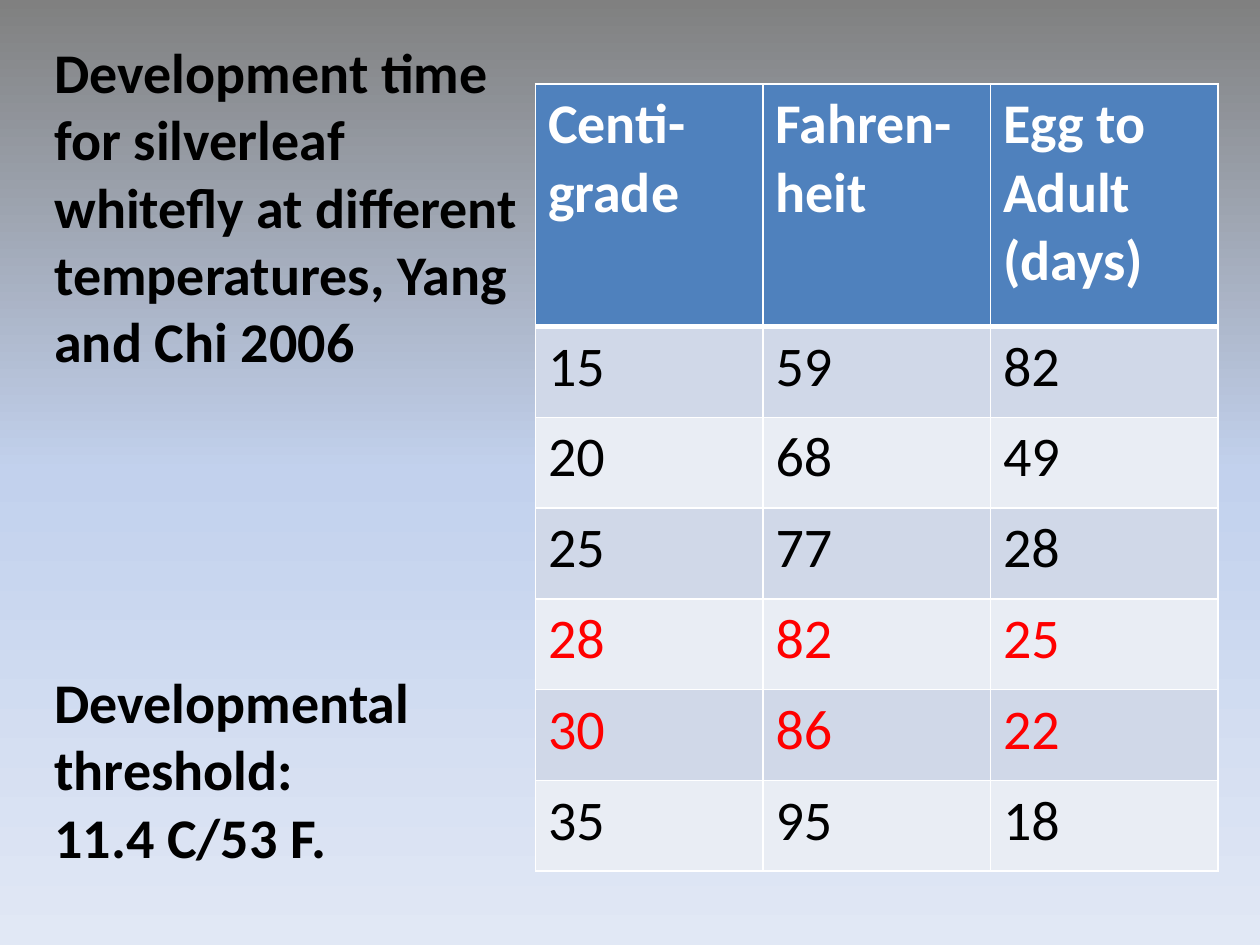
from copy import deepcopy

from lxml import etree
from pptx import Presentation
from pptx.dml.color import RGBColor
from pptx.enum.text import MSO_AUTO_SIZE
from pptx.oxml.ns import qn
from pptx.util import Pt

FIT_SHAPE = MSO_AUTO_SIZE.SHAPE_TO_FIT_TEXT
BLACK = RGBColor(0x00, 0x00, 0x00)
WHITE = RGBColor(0xFF, 0xFF, 0xFF)
RED = RGBColor(0xFF, 0x00, 0x00)
HEADER_BLUE = RGBColor(0x4F, 0x81, 0xBD)
BANDS = (RGBColor(0xD0, 0xD8, 0xE8), RGBColor(0xE9, 0xED, 0xF4))
SKY = (
    (0, RGBColor(0x80, 0x80, 0x80)),
    (0.5, RGBColor(0xC2, 0xD1, 0xED)),
    (1, RGBColor(0xE1, 0xE8, 0xF5)),
)

HEADERS = ("Centi-grade", "Fahren-heit", "Egg to Adult (days)")
DEVELOPMENT = (
    (15, 59, 82),
    (20, 68, 49),
    (25, 77, 28),
    (28, 82, 25),
    (30, 86, 22),
    (35, 95, 18),
)
HIGHLIGHTED = (28, 30)


def set_background(s, stops):
    fill = s.background.fill
    fill.gradient()
    fill.gradient_angle = 270
    gs_list = next(s._element.iter(qn("a:gsLst")))
    gs_list.append(deepcopy(gs_list[-1]))
    for stop, (position, color) in zip(fill.gradient_stops, stops):
        stop.position = position
        stop.color.rgb = color


def write(tf, text, size=32, color=BLACK, bold=False, font="Calibri"):
    for i, line in enumerate(text.split("\n")):
        p = tf.add_paragraph() if i else tf.paragraphs[0]
        r = p.add_run()
        r.text = line
        r.font.name = font
        r.font.size = Pt(size)
        r.font.bold = bold
        r.font.color.rgb = color


def add_text(s, x, y, w, h, text, **fmt):
    tf = s.shapes.add_textbox(Pt(x), Pt(y), Pt(w), Pt(h)).text_frame
    tf.word_wrap = True
    tf.auto_size = FIT_SHAPE
    write(tf, text, **fmt)


def set_borders(cell, color, **widths):
    tc_pr = cell._tc.get_or_add_tcPr()
    for side in "LRTB":
        ln = etree.SubElement(tc_pr, qn(f"a:ln{side}"), w=str(Pt(widths.get(side, 1))))
        fill = etree.SubElement(ln, qn("a:solidFill"))
        etree.SubElement(fill, qn("a:srgbClr"), val=str(color))


def fill_cell(cell, text, fill, borders, **fmt):
    set_borders(cell, WHITE, **borders)
    cell.fill.solid()
    cell.fill.fore_color.rgb = fill
    write(cell.text_frame, text, **fmt)


def add_data_table(s, x, y, col_w, header_h, row_h):
    n_rows, n_cols = len(DEVELOPMENT) + 1, len(HEADERS)
    height = header_h + row_h * len(DEVELOPMENT)
    table = s.shapes.add_table(
        n_rows, n_cols, Pt(x), Pt(y), Pt(col_w * n_cols), Pt(height)
    ).table
    for col in table.columns:
        col.width = Pt(col_w)
    for i, row in enumerate(table.rows):
        row.height = Pt(row_h if i else header_h)
    for j, text in enumerate(HEADERS):
        fill_cell(table.cell(0, j), text, HEADER_BLUE, {"B": 3}, color=WHITE, bold=True)
    for i, values in enumerate(DEVELOPMENT, 1):
        color = RED if values[0] in HIGHLIGHTED else BLACK
        borders = {"T": 3} if i == 1 else {}
        for j, value in enumerate(values):
            fill_cell(table.cell(i, j), str(value), BANDS[(i - 1) % 2], borders, color=color)


def main():
    prs = Presentation()
    prs.slide_width, prs.slide_height = Pt(720), Pt(540)
    s = prs.slides.add_slide(prs.slide_layouts[6])
    set_background(s, SKY)
    add_data_table(s, 306, 48, col_w=130, header_h=138.6, row_h=51.9)
    add_text(
        s, 24, 18, 288, 201,
        "Development time for silverleaf whitefly at different temperatures, "
        "Yang and Chi 2006",
        bold=True,
    )
    add_text(
        s, 24, 378, 258, 124,
        "Developmental threshold:\n11.4 C/53 F.",
        bold=True,
    )
    prs.save("out.pptx")


if __name__ == "__main__":
    main()
